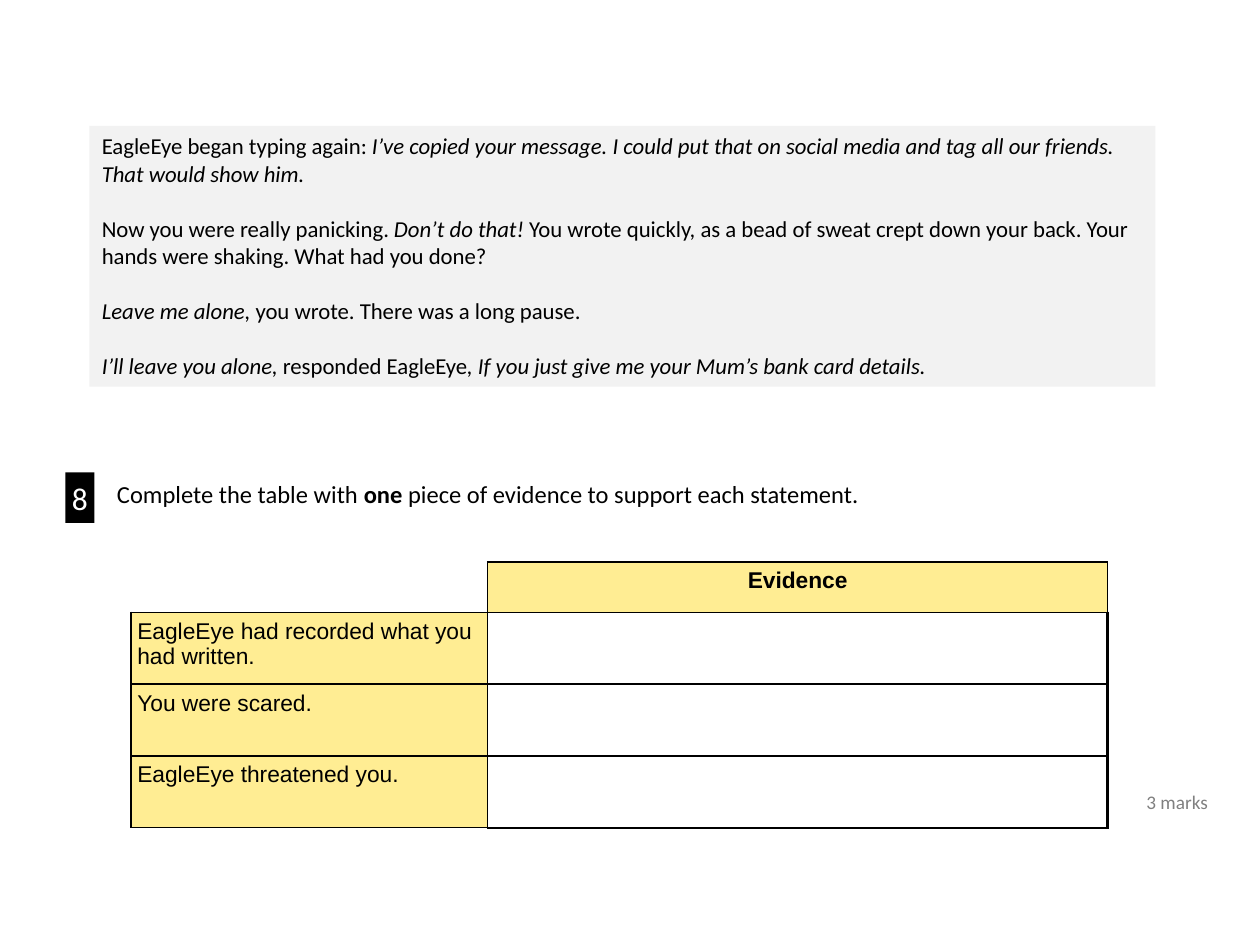
"""Build a reading question slide with a passage and an evidence table."""
from lxml import etree
from pptx import Presentation, util as u
from pptx.dml.color import RGBColor
from pptx.enum import shapes, text as t
from pptx.oxml.ns import qn


def tint(code):
    return RGBColor.from_string(code)


def put(frame, text, size=13, face="Calibri", color="000000", mark="italic",
        align=t.PP_ALIGN.LEFT, gap=0, pad=None, wrap=True):
    frame.word_wrap = wrap
    frame.vertical_anchor = t.MSO_ANCHOR.TOP
    if pad is not None:
        frame.margin_left = frame.margin_right = pad
        frame.margin_top = frame.margin_bottom = pad
    for row, line in enumerate(text.split("\n")):
        para = frame.add_paragraph() if row else frame.paragraphs[0]
        para.alignment = align
        para.space_before = u.Pt(gap if row else 0)
        for part, words in enumerate(line.split("*")):
            if line and not words:
                continue
            run = para.add_run()
            run.text = words
            font = run.font
            font.size, font.name = u.Pt(size), face
            font.color.rgb = tint(color)
            setattr(font, mark, part % 2 == 1)


deck = Presentation()
deck.slide_width, deck.slide_height = u.Inches(10), u.Inches(7.5)
slide = deck.slides.add_slide(deck.slide_layouts[6])
unit = deck.slide_width // 1000
pad = 5 * unit

story = """EagleEye began typing again: *I’ve copied your message. I could put that on social media and tag all our friends. That would show him.*
Now you were really panicking. *Don’t do that! *You wrote quickly, as a bead of sweat crept down your back. Your hands were shaking. What had you done?
*Leave me alone, *you wrote. There was a long pause.
*I’ll leave you alone,* responded EagleEye*, If you just give me your Mum’s bank card details.*"""
panels = [
    ((71, 100, 846, 207), "F2F2F2", story, dict(gap=15.87)),
    ((52, 375, 23, 40), "000000", "8",
     dict(size=18, color="FFFFFF", pad=pad, wrap=False)),
]
for place, fill, words, style in panels:
    box = slide.shapes.add_shape(
        shapes.MSO_SHAPE.RECTANGLE, *(n * unit for n in place))
    box.shadow.inherit = False
    box.fill.solid()
    box.fill.fore_color.rgb = tint(fill)
    box.line.fill.background()
    put(box.text_frame, words, **style)

task = "Complete the table with *one *piece of evidence to support each statement."
labels = [
    ((83, 375, 740, 40), task, dict(size=14, mark="bold")),
    ((900, 622, 70, 29), "3 marks", dict(size=11, color="808080", wrap=False)),
]
for place, words, style in labels:
    box = slide.shapes.add_textbox(*(n * unit for n in place))
    put(box.text_frame, words, **style)

claims = ["EagleEye had recorded what you had written.",
          "You were scared.", "EagleEye threatened you."]
grid = [["", "*Evidence*"]] + [[claim, ""] for claim in claims]
wide, high = [283, 492], [35, 57, 57, 57]
table = slide.shapes.add_table(
    len(high), len(wide), 104 * unit, 446 * unit,
    sum(wide) * unit, sum(high) * unit).table
table.first_row = table.horz_banding = False
for col, width in zip(table.columns, wide):
    col.width = width * unit
for row, height in zip(table.rows, high):
    row.height = height * unit

for r, line in enumerate(grid):
    for c, words in enumerate(line):
        cell = table.cell(r, c)
        cell.margin_left = cell.margin_right = pad
        cell.margin_top = cell.margin_bottom = pad
        align = t.PP_ALIGN.LEFT if r else t.PP_ALIGN.CENTER
        put(cell.text_frame, words, face="Arial", mark="bold", align=align)
        if words:
            cell.fill.solid()
            cell.fill.fore_color.rgb = tint("FFED93")
        else:
            cell.fill.background()
        props = cell._tc.get_or_add_tcPr()
        for k, side in enumerate("LRTB"):
            blank = r == c == 0 and side in "LT"
            thick = r and c and (side in "RB" or side == "T" and r > 1)
            weight = 1.5 if blank or thick else 1
            edge = etree.Element(qn(f"a:ln{side}"), w=str(u.Pt(weight)))
            paint = etree.SubElement(edge, qn("a:solidFill"))
            etree.SubElement(paint, qn("a:srgbClr"),
                             val="FFFFFF" if blank else "000000")
            props.insert(k, edge)

deck.save("out.pptx")
